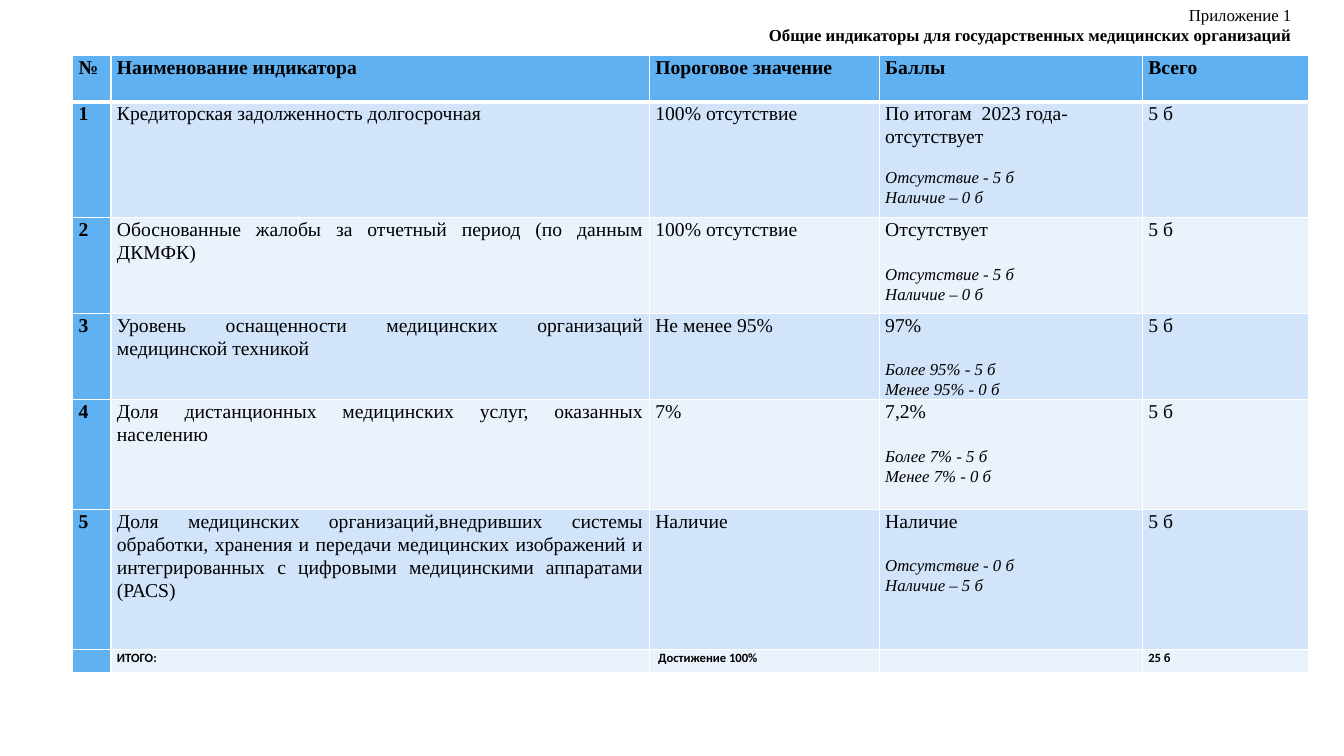
from lxml import etree
from pptx import Presentation
from pptx.dml.color import RGBColor
from pptx.enum.text import MSO_ANCHOR, PP_ALIGN
from pptx.oxml.ns import qn
from pptx.util import Inches, Pt

LEFT, RIGHT, JUSTIFY = PP_ALIGN.LEFT, PP_ALIGN.RIGHT, PP_ALIGN.JUSTIFY
TOP, MIDDLE = MSO_ANCHOR.TOP, MSO_ANCHOR.MIDDLE
SERIF, SANS = "Times New Roman", "Calibri"
WHITE, BLACK, BLUE = "FFFFFF", "000000", "60B1F2"
BANDS = ("D2E4FA", "EAF2FC")
COLS = (0.38, 5.34, 2.28, 2.61, 1.65)
ROWS = (0.46, 1.15, 0.95, 0.85, 1.09, 1.39, 0.23)
HEADER = ("№", "Наименование индикатора", "Пороговое значение", "Баллы", "Всего")
INDICATORS = (
    ("Кредиторская задолженность долгосрочная", "100% отсутствие",
     ("По итогам  2023 года-отсутствует", "Отсутствие - 5 б", "Наличие – 0 б")),
    ("Обоснованные жалобы за отчетный период (по данным ДКМФК)", "100% отсутствие",
     ("Отсутствует", "Отсутствие - 5 б", "Наличие – 0 б")),
    ("Уровень оснащенности медицинских организаций медицинской техникой",
     "Не менее 95%", ("97%", "Более 95% - 5 б", "Менее 95% - 0 б")),
    ("Доля дистанционных медицинских услуг, оказанных населению", "7%",
     ("7,2%", "Более 7% - 5 б", "Менее 7% - 0 б")),
    ("Доля медицинских организаций,внедривших системы обработки, хранения и "
     "передачи медицинских изображений и интегрированных с цифровыми "
     "медицинскими аппаратами (РАСS)", "Наличие",
     ("Наличие", "Отсутствие - 0 б", "Наличие – 5 б")),
)
TOTAL = ("", "ИТОГО:", " Достижение 100%", "", "25 б")


def rgb(value):
    """Return the colour for a hex string."""
    return RGBColor.from_string(value)


def write(tf, text, size=14, font=SERIF, bold=False, italic=False, align=LEFT,
          spacing=1.07, before=0):
    """Write a paragraph, using the first one while it is empty."""
    p = tf.paragraphs[0] if not tf.text else tf.add_paragraph()
    p.alignment, p.line_spacing = align, spacing
    p.space_before, p.space_after = Pt(before), Pt(0)
    if not text:
        etree.SubElement(p._p, qn("a:endParaRPr"), sz=str(size * 100))
        return
    r = p.add_run()
    r.text = text
    r.font.size, r.font.name = Pt(size), font
    r.font.bold, r.font.italic = bold, italic
    r.font.color.rgb = rgb(BLACK)


def style_cell(cell, fill, top=1, bottom=1):
    """Set the margins, white borders and fill of a cell."""
    cell.margin_left = cell.margin_right = Inches(0.06)
    cell.margin_top = cell.margin_bottom = 0
    cell.vertical_anchor = TOP
    tc_pr = cell._tc.get_or_add_tcPr()
    for side, width in (("L", 1), ("R", 1), ("T", top), ("B", bottom)):
        ln = etree.SubElement(tc_pr, qn(f"a:ln{side}"), w=str(Pt(width)))
        solid = etree.SubElement(ln, qn("a:solidFill"))
        etree.SubElement(solid, qn("a:srgbClr"), val=WHITE)
    cell.fill.solid()
    cell.fill.fore_color.rgb = rgb(fill)


def add_heading(slide, left, top, width, height):
    """Place the right-aligned two-line heading in the title placeholder."""
    sp = slide.shapes.title
    sp.left, sp.top, sp.width, sp.height = map(Inches, (left, top, width, height))
    tf = sp.text_frame
    tf.word_wrap, tf.vertical_anchor = True, MIDDLE
    for text, bold in (("Приложение 1", False),
                       ("Общие индикаторы для государственных медицинских организаций", True)):
        write(tf, text, size=12, bold=bold, align=RIGHT, spacing=1.0)


def fill_indicator(cells, number, name, threshold, score):
    """Write one numbered indicator across its row of cells."""
    result, *hints = score
    write(cells[0].text_frame, str(number), bold=True, align=JUSTIFY)
    write(cells[1].text_frame, name, align=JUSTIFY)
    write(cells[2].text_frame, threshold)
    write(cells[3].text_frame, result)
    gap = 14 if number == 1 else 16.5
    for i, hint in enumerate(hints):
        write(cells[3].text_frame, hint, size=12, italic=True, before=0 if i else gap)
    write(cells[4].text_frame, "5 б")


def add_indicators(slide, left, top):
    """Build the table of indicators from its top left corner."""
    box = map(Inches, (left, top, sum(COLS), sum(ROWS)))
    table = slide.shapes.add_table(len(ROWS), len(COLS), *box).table
    table.first_row = table.horz_banding = False
    for column, width in zip(table.columns, COLS):
        column.width = Inches(width)
    for i, (row, height) in enumerate(zip(table.rows, ROWS)):
        row.height = Inches(height)
        for j, cell in enumerate(row.cells):
            fill = BLUE if i == 0 or j == 0 else BANDS[(i - 1) % 2]
            style_cell(cell, fill, top=3 if i == 1 else 1, bottom=3 if i == 0 else 1)
    rows = [list(row.cells) for row in table.rows]
    for cell, text in zip(rows[0], HEADER):
        write(cell.text_frame, text, bold=True)
    for number, indicator in enumerate(INDICATORS, 1):
        fill_indicator(rows[number], number, *indicator)
    for cell, text in zip(rows[-1], TOTAL):
        write(cell.text_frame, text, size=9, font=SANS, bold=True)


def main():
    """Create the slide and save it."""
    prs = Presentation()
    prs.slide_width, prs.slide_height = Inches(13.33), Inches(7.5)
    slide = prs.slides.add_slide(prs.slide_layouts[5])
    slide.background.fill.solid()
    slide.background.fill.fore_color.rgb = rgb(WHITE)
    add_indicators(slide, 0.72, 0.55)
    add_heading(slide, 0.72, 0, 12.19, 0.5)
    prs.save("out.pptx")


if __name__ == "__main__":
    main()
